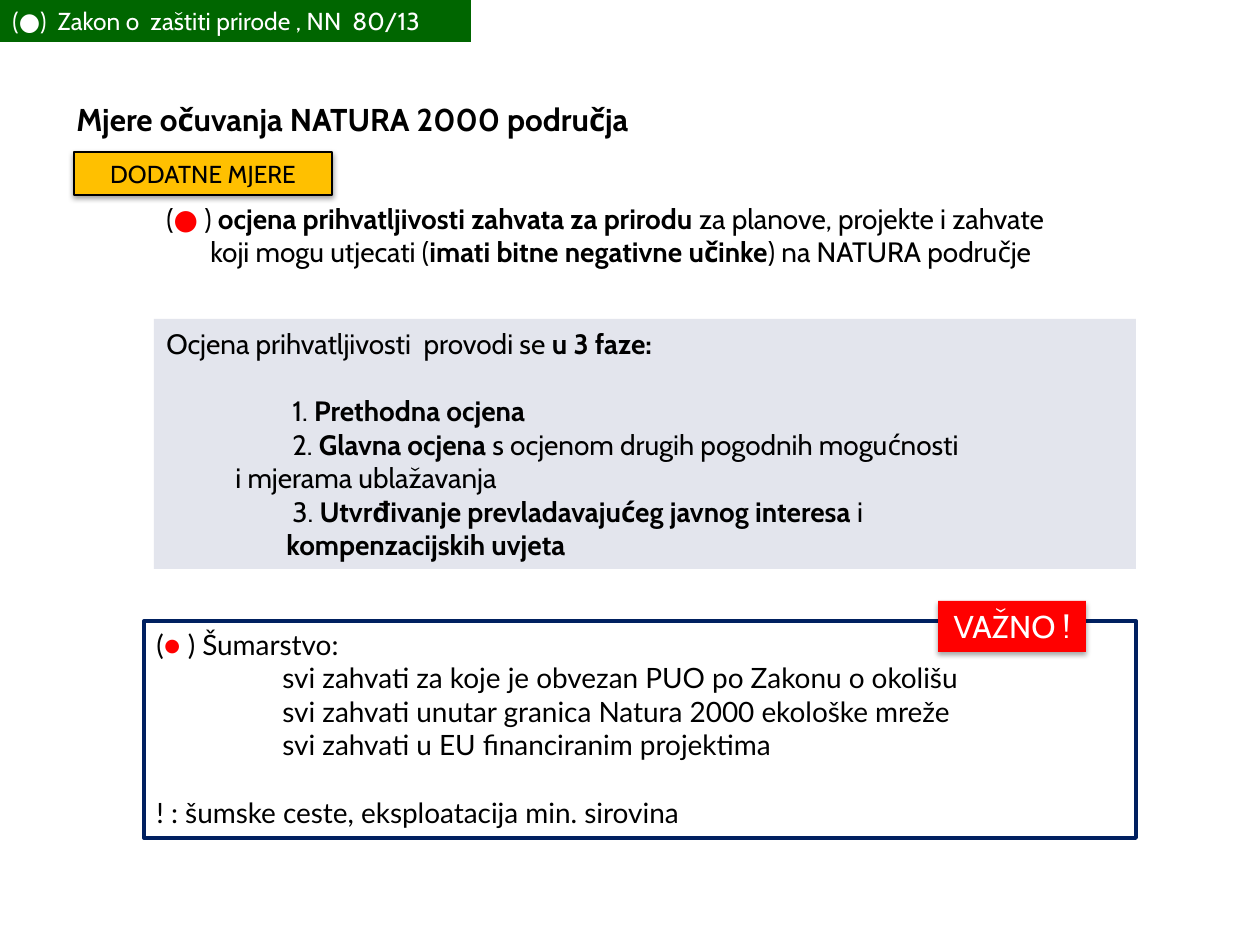
from dataclasses import dataclass

import pptx
import pptx.dml.color
import pptx.enum.shapes
import pptx.enum.text
import pptx.oxml
import pptx.oxml.ns
import pptx.util

PX = 914400 / 126
COLORS = {
    "black": "000000", "white": "FFFFFF", "red": "FF0000", "amber": "FFC000",
    "green": "006600", "grey": "E3E5ED", "navy": "002060",
}
TAB = 126
BLANK_LINE = 19.2
ALIGN = pptx.enum.text.PP_ALIGN
ANCHOR = pptx.enum.text.MSO_ANCHOR


@dataclass(frozen=True)
class Run:
    text: str
    bold: bool = False
    color: str | None = None


@dataclass(frozen=True)
class Line:
    runs: tuple[Run, ...]
    indent: int = 0
    space_before: float = 0


@dataclass(frozen=True)
class Shadow:
    distance: float
    opacity: int
    blur: float = 3.1


@dataclass(frozen=True)
class Box:
    left: int
    top: int
    width: int
    height: int
    lines: tuple[Line, ...]
    size: int
    font: str = "Cabin"
    color: str = "black"
    fill: str | None = None
    border: str | None = None
    border_width: float = 0.75
    shadow: Shadow | None = None
    align: ALIGN = ALIGN.LEFT
    anchor: ANCHOR = ANCHOR.TOP
    wrap: bool = True


def line(text: str, indent: int = 0, space_before: float = 0, bold: bool = False) -> Line:
    return Line((Run(text, bold),), indent, space_before)


BOXES = (
    Box(64, 94, 784, 50, (line("Mjere očuvanja NATURA 2000 područja", bold=True),), 18,
        anchor=ANCHOR.MIDDLE),
    Box(154, 195, 1062, 81, (
        Line((Run("("), Run("● ", color="red"), Run(") "),
              Run("ocjena prihvatljivosti zahvata za prirodu ", True),
              Run("za planove, projekte i zahvate"))),
        Line((Run("koji mogu utjecati ("), Run("imati bitne negativne učinke", True),
              Run(") na NATURA područje")), 44),
    ), 16),
    Box(74, 152, 258, 43, (line("DODATNE MJERE"),), 14, fill="amber", border="black",
        shadow=Shadow(1.6, 38), align=ALIGN.CENTER, anchor=ANCHOR.MIDDLE),
    Box(154, 319, 982, 250, (
        Line((Run("Ocjena prihvatljivosti  provodi se "), Run("u 3 faze:", True))),
        Line((Run("1. "), Run("Prethodna ocjena", True)), TAB, BLANK_LINE),
        Line((Run("2. "), Run("Glavna ocjena ", True),
              Run("s ocjenom drugih pogodnih mogućnosti")), TAB),
        line("i mjerama ublažavanja", 69),
        Line((Run("3. "), Run("Utvrđivanje prevladavajućeg javnog interesa ", True),
              Run("i")), TAB),
        line("kompenzacijskih uvjeta", 120, bold=True),
    ), 16, fill="grey", anchor=ANCHOR.MIDDLE),
    Box(144, 621, 992, 217, (
        Line((Run("("), Run("● ", color="red"), Run(") Šumarstvo:"))),
        line("svi zahvati za koje je obvezan PUO po Zakonu o okolišu", TAB),
        line("svi zahvati unutar granica Natura 2000 ekološke mreže", TAB),
        line("svi zahvati u EU financiranim projektima", TAB),
        line("! : šumske ceste, eksploatacija min. sirovina", space_before=BLANK_LINE),
    ), 16, font="Lato", border="navy", border_width=2.25),
    Box(938, 601, 148, 51, (line("VAŽNO !"),), 18, color="white", fill="red",
        shadow=Shadow(1.8, 35), align=ALIGN.CENTER, wrap=False),
    Box(0, 0, 471, 42, (line("(●)  Zakon o  zaštiti prirode , NN  80/13"),), 14,
        color="white", fill="green"),
)


def px(length: int) -> int:
    return round(length * PX)


def rgb(name: str) -> pptx.dml.color.RGBColor:
    return pptx.dml.color.RGBColor.from_string(COLORS[name])


def add_shadow(shape, shadow: Shadow) -> None:
    """Fill the shape's empty effect list with a shadow falling straight down."""
    effects = shape._element.spPr.find(pptx.oxml.ns.qn("a:effectLst"))
    effects.append(pptx.oxml.parse_xml(
        f'<a:outerShdw {pptx.oxml.ns.nsdecls("a")} blurRad="{pptx.util.Pt(shadow.blur)}" '
        f'dist="{pptx.util.Pt(shadow.distance)}" dir="5400000" rotWithShape="0">'
        f'<a:srgbClr val="{COLORS["black"]}"><a:alpha val="{shadow.opacity * 1000}"/>'
        '</a:srgbClr></a:outerShdw>'))


def write_line(paragraph, content: Line, box: Box) -> None:
    paragraph.alignment = box.align
    if content.indent:
        paragraph._p.get_or_add_pPr().set("marL", str(px(content.indent)))
    if content.space_before:
        paragraph.space_before = pptx.util.Pt(content.space_before)
    for part in content.runs:
        run = paragraph.add_run()
        run.text = part.text
        run.font.name = box.font
        run.font.size = pptx.util.Pt(box.size)
        run.font.bold = part.bold
        run.font.color.rgb = rgb(part.color or box.color)


def add_box(slide, box: Box) -> None:
    frame = [px(length) for length in (box.left, box.top, box.width, box.height)]
    if box.fill or box.border:
        shape = slide.shapes.add_shape(pptx.enum.shapes.MSO_SHAPE.RECTANGLE, *frame)
        shape.shadow.inherit = False
        if box.fill:
            shape.fill.solid()
            shape.fill.fore_color.rgb = rgb(box.fill)
        else:
            shape.fill.background()
        if box.border:
            shape.line.color.rgb = rgb(box.border)
            shape.line.width = pptx.util.Pt(box.border_width)
        else:
            shape.line.fill.background()
        if box.shadow:
            add_shadow(shape, box.shadow)
    else:
        shape = slide.shapes.add_textbox(*frame)
    text_frame = shape.text_frame
    text_frame.word_wrap = box.wrap
    text_frame.vertical_anchor = box.anchor
    for index, content in enumerate(box.lines):
        paragraph = text_frame.add_paragraph() if index else text_frame.paragraphs[0]
        write_line(paragraph, content, box)


def main() -> None:
    presentation = pptx.Presentation()
    presentation.slide_width = px(1260)
    presentation.slide_height = px(945)
    slide = presentation.slides.add_slide(presentation.slide_layouts[6])
    for box in BOXES:
        add_box(slide, box)
    presentation.save("out.pptx")


if __name__ == "__main__":
    main()
